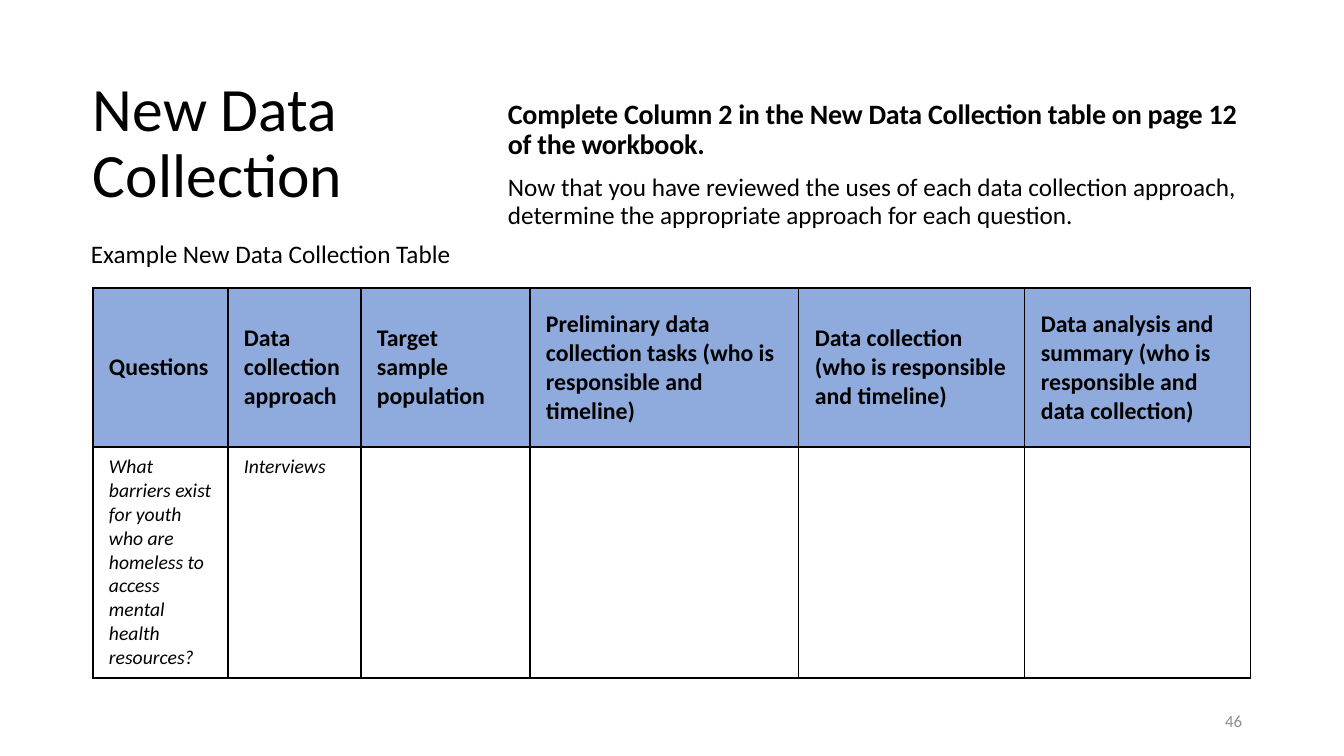
from lxml import etree
from pptx import Presentation
from pptx import util as u
from pptx.dml.color import RGBColor
from pptx.enum import text
from pptx.oxml.ns import qn

PX = 914400 / 100.8
FONT = "Calibri"
COLORS = {"ink": "000000", "head": "8FAADC", "page": "8C8C8C"}
COLS = [135, 133, 169, 269, 226, 226]
ROWS = [159, 231]
HEADS = [
    "Questions",
    "Data collection approach",
    "Target sample population",
    "Preliminary data collection tasks (who is responsible and timeline)",
    "Data collection (who is responsible and timeline)",
    "Data analysis and summary (who is responsible and data collection)",
]
ANSWERS = [
    "What barriers exist for youth who are homeless to access mental health resources?",
    "Interviews", "", "", "", "",
]
MIDDLE = text.MSO_ANCHOR.MIDDLE
TOP = text.MSO_ANCHOR.TOP


def px(n):
    return u.Emu(round(n * PX))


def color(name):
    return RGBColor.from_string(COLORS[name])


def style(para, size, ink="ink", bold=False, italic=False):
    font = para.font
    font.name = FONT
    font.size = u.Pt(size)
    font.bold = bold
    font.italic = italic
    font.color.rgb = color(ink)


def add_text(slide, box, words, size, anchor=MIDDLE, ink="ink"):
    frame = slide.shapes.add_textbox(*map(px, box)).text_frame
    frame.word_wrap = True
    frame.vertical_anchor = anchor
    para = frame.paragraphs[0]
    para.add_run().text = words
    style(para, size, ink)
    return frame


def add_title(slide):
    frame = add_text(slide, (93, 65, 392, 159), "New Data Collection", 44)
    frame.margin_left = 0
    frame.paragraphs[0].line_spacing = 0.9


def add_body(slide):
    frame = add_text(
        slide, (498, 75, 752, 180),
        "Complete Column 2 in the New Data Collection table on page 12 of the workbook.", 20)
    lead = frame.paragraphs[0]
    lead.font.bold = True
    lead.line_spacing = 0.9
    lead.runs[0]._r.get_or_add_rPr().set("spc", "-20")
    para = frame.add_paragraph()
    para.text = ("Now that you have reviewed the uses of each data collection approach, "
                 "determine the appropriate approach for each question.")
    para.line_spacing = 0.9
    para.space_before = u.Pt(10)
    style(para, 18)


def add_edges(cell):
    props = cell._tc.get_or_add_tcPr()
    for spot, side in enumerate(("lnL", "lnR", "lnT", "lnB")):
        line = etree.Element(qn(f"a:{side}"), w=str(u.Pt(1)))
        fill = etree.SubElement(line, qn("a:solidFill"))
        etree.SubElement(fill, qn("a:srgbClr"), val=COLORS["ink"])
        props.insert(spot, line)


def fill_cell(cell, words, head):
    cell.margin_left = cell.margin_right = px(16)
    cell.margin_top = cell.margin_bottom = px(8)
    cell.vertical_anchor = MIDDLE if head else TOP
    if head:
        cell.fill.solid()
        cell.fill.fore_color.rgb = color("head")
    else:
        cell.fill.background()
    add_edges(cell)
    if words:
        cell.text = words
        style(cell.text_frame.paragraphs[0], 17 if head else 14, bold=head, italic=not head)


def add_grid(slide):
    table = slide.shapes.add_table(
        len(ROWS), len(COLS), px(93), px(288), px(sum(COLS)), px(sum(ROWS))).table
    table.horz_banding = False
    for col, width in zip(table.columns, COLS):
        col.width = px(width)
    for row, height, words in zip(table.rows, ROWS, (HEADS, ANSWERS)):
        row.height = px(height)
        for cell, word in zip(row.cells, words):
            fill_cell(cell, word, words is HEADS)


def main():
    deck = Presentation()
    deck.slide_width = px(1344)
    deck.slide_height = px(756)
    slide = deck.slides.add_slide(deck.slide_layouts[6])
    add_body(slide)
    add_title(slide)
    add_grid(slide)
    add_text(slide, (81, 233, 484, 42), "Example New Data Collection Table", 18, TOP)
    page = add_text(slide, (950, 701, 302, 40), "46", 12, ink="page")
    page.paragraphs[0].alignment = text.PP_ALIGN.RIGHT
    deck.save("out.pptx")


if __name__ == "__main__":
    main()
